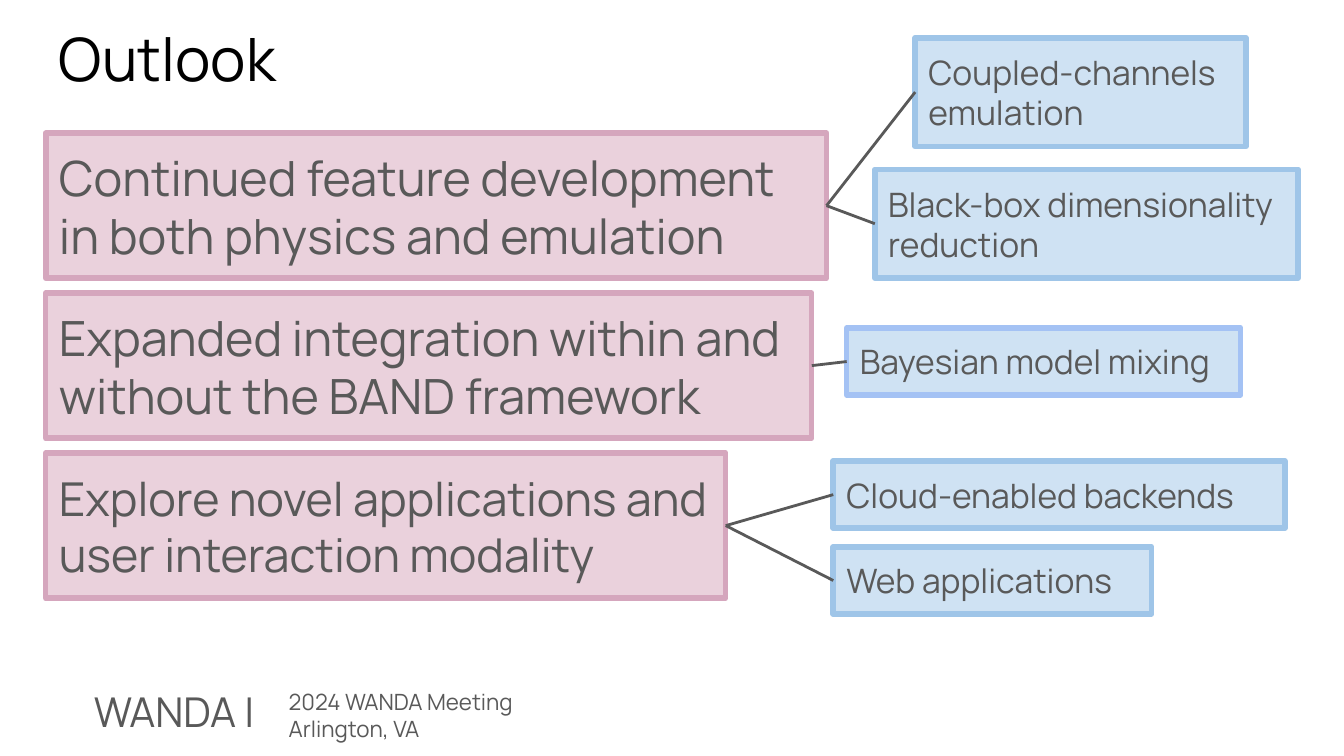
from lxml.etree import SubElement
from pptx import Presentation
from pptx.dml.color import RGBColor
from pptx.enum.shapes import MSO_CONNECTOR, MSO_SHAPE
from pptx.enum.text import MSO_ANCHOR, MSO_AUTO_SIZE, PP_ALIGN
from pptx.oxml.ns import qn
from pptx.util import Pt

FONT = "Manrope"
BLACK = RGBColor(0x00, 0x00, 0x00)
GREY = RGBColor(0x59, 0x59, 0x59)
PINK = RGBColor(0xEA, 0xD1, 0xDC)
PINK_EDGE = RGBColor(0xD5, 0xA6, 0xBD)
BLUE = RGBColor(0xCF, 0xE2, 0xF3)
BLUE_EDGE = RGBColor(0x9F, 0xC5, 0xE8)
VIOLET_EDGE = RGBColor(0xA4, 0xC2, 0xF4)

LEFT, GOAL_TOP, GOAL_PITCH, GOAL_HEIGHT = 24.5, 71.3, 85.7, 77.8
RIGHT_SIDE, LEFT_SIDE = 3, 1

# Each goal: text, width, size, and its details (text, position and size, edge).
GOALS = [
    ("Continued feature development in both physics and emulation", 418.3, 26, [
        ("Coupled-channels emulation", (490.3, 20.2, 177.1, 58.3), BLUE_EDGE),
        ("Black-box dimensionality reduction", (468.7, 90.7, 226.8, 58.3), BLUE_EDGE),
    ]),
    ("Expanded integration within and without the BAND framework", 410.4, 26, [
        ("Bayesian model mixing", (453.6, 175.7, 211, 36), VIOLET_EDGE),
    ]),
    ("Explore novel applications and user interaction modality", 364.3, 25, [
        ("Cloud-enabled backends", (446.4, 247, 241.9, 36), BLUE_EDGE),
        ("Web applications", (446.4, 293, 170.6, 36), BLUE_EDGE),
    ]),
]


def set_values(target, values):
    for name, value in values.items():
        setattr(target, name, value)


def write_text(shape, lines, size, color=GREY, anchor=MSO_ANCHOR.MIDDLE,
               auto_size=MSO_AUTO_SIZE.SHAPE_TO_FIT_TEXT):
    frame = shape.text_frame
    frame.text = "\n".join(lines)
    margins = {f"margin_{side}": Pt(7.2) for side in ("left", "top", "right", "bottom")}
    set_values(frame, {"word_wrap": True, "auto_size": auto_size,
                       "vertical_anchor": anchor, **margins})
    for para in frame.paragraphs:
        para.alignment = PP_ALIGN.LEFT
        for span in para.runs:
            set_values(span.font, {"name": FONT, "size": Pt(size)})
            span.font.color.rgb = color


def add_label(page, bounds, lines, size, **style):
    box = page.shapes.add_textbox(*map(Pt, bounds))
    write_text(box, lines, size, **style)


def add_box(page, bounds, text, size, fill, edge):
    box = page.shapes.add_shape(MSO_SHAPE.RECTANGLE, *map(Pt, bounds))
    box.shadow.inherit = False
    box.fill.solid()
    box.fill.fore_color.rgb = fill
    box.line.color.rgb = edge
    box.line.width = Pt(3)
    write_text(box, [text], size)
    return box


def add_link(page, goal, detail):
    """Join the goal's right side to the detail's left side."""
    link = page.shapes.add_connector(MSO_CONNECTOR.STRAIGHT, 0, 0, 0, 0)
    link.begin_connect(goal, RIGHT_SIDE)
    link.end_connect(detail, LEFT_SIDE)
    link.line.color.rgb = GREY
    link.line.width = Pt(1.5)
    SubElement(link._element.spPr, qn("a:effectLst"))


def add_goals(page):
    for row, (text, width, size, details) in enumerate(GOALS):
        bounds = (LEFT, GOAL_TOP + row * GOAL_PITCH, width, GOAL_HEIGHT)
        goal = add_box(page, bounds, text, size, PINK, PINK_EDGE)
        for detail_text, detail_bounds, edge in details:
            detail = add_box(page, detail_bounds, detail_text, 18, BLUE, edge)
            add_link(page, goal, detail)


def add_footer(page):
    style = {"anchor": MSO_ANCHOR.TOP, "auto_size": MSO_AUTO_SIZE.NONE}
    add_label(page, (43.2, 360.7, 114.5, 43.2), ["WANDA |"], 22, **style)
    add_label(page, (147.6, 361.4, 276.5, 43.2),
              ["2024 WANDA Meeting", "Arlington, VA"], 12, **style)


def main():
    deck = Presentation()
    set_values(deck, {"slide_width": Pt(720), "slide_height": Pt(405)})
    page = deck.slides.add_slide(deck.slide_layouts[6])
    add_footer(page)
    add_label(page, (LEFT, 4.3, 671, 53.3), ["Outlook"], 32, color=BLACK)
    add_goals(page)
    deck.save("out.pptx")


if __name__ == "__main__":
    main()
